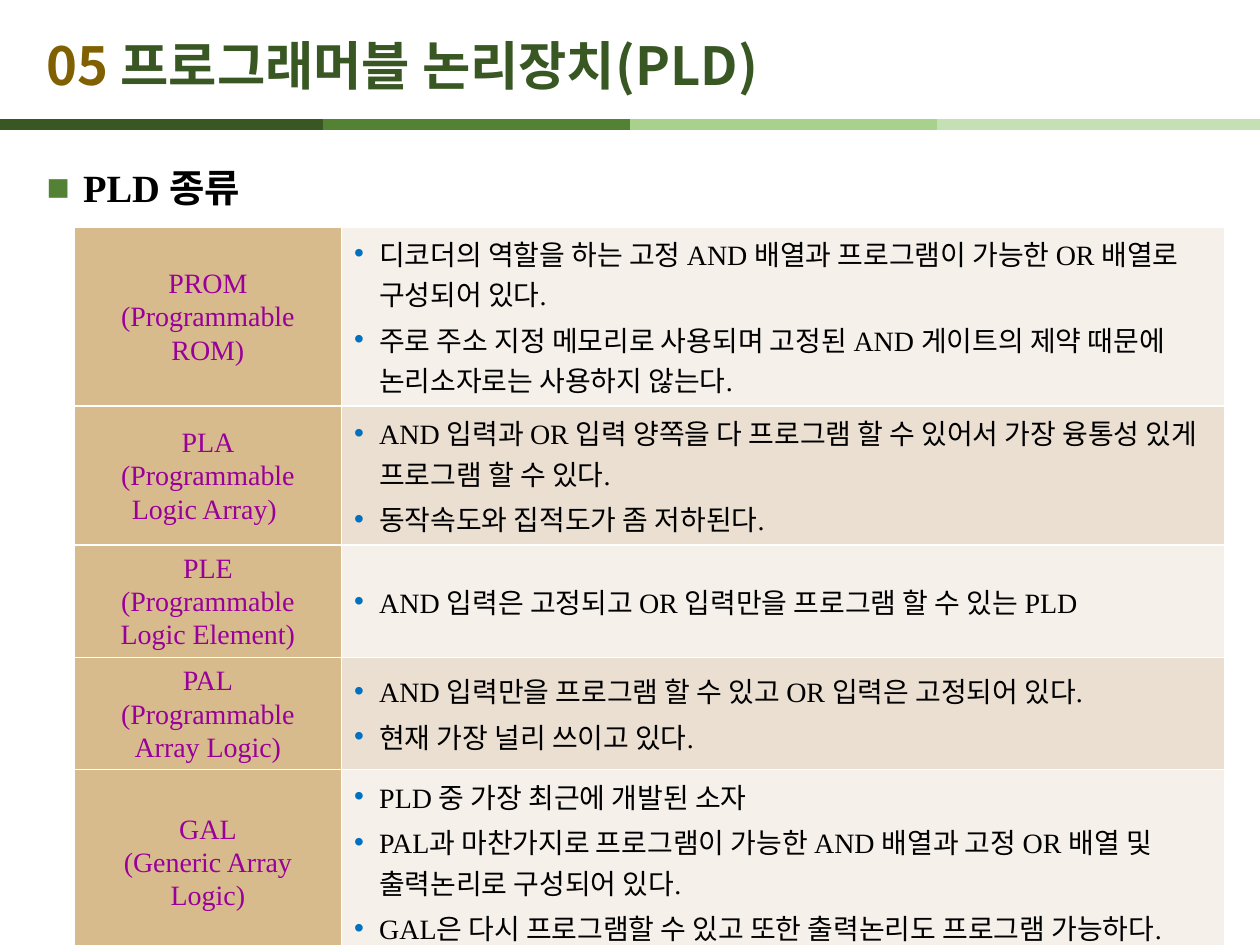
from lxml.etree import SubElement
from pptx import Presentation
from pptx.dml.color import RGBColor
from pptx.enum.shapes import MSO_CONNECTOR
from pptx.enum.text import MSO_ANCHOR, MSO_AUTO_SIZE, PP_ALIGN
from pptx.oxml import parse_xml
from pptx.oxml.ns import nsdecls, qn
from pptx.util import Inches, Pt

KOREAN_FONT = "Noto Sans CJK KR"
LATIN_FONT = "Times New Roman"


def style_runs(paragraph, size, color, latin=LATIN_FONT, bold=False):
    for run in paragraph.runs:
        font = run.font
        font.size, font.bold, font.name = Pt(size), bold, latin
        font.color.rgb = RGBColor.from_string(color)
        SubElement(font._element, qn("a:ea"), typeface=KOREAN_FONT)


def add_bullet(paragraph, character, color, indent):
    properties = paragraph._p.get_or_add_pPr()
    properties.set("marL", str(Inches(indent)))
    properties.set("indent", str(-Inches(indent)))
    bullet_color = SubElement(properties, qn("a:buClr"))
    SubElement(bullet_color, qn("a:srgbClr"), val=color)
    SubElement(properties, qn("a:buFont"), typeface="Arial")
    SubElement(properties, qn("a:buChar"), char=character)


presentation = Presentation()
presentation.slide_width = Inches(10)
presentation.slide_height = Inches(7.5)
slide = presentation.slides.add_slide(presentation.slide_layouts[1])

# Four-colour rule under the title
for left, color in [(0, "385723"), (2.56, "548235"), (5, "A9D18E"), (7.44, "C5E0B4")]:
    rule = slide.shapes.add_connector(
        MSO_CONNECTOR.STRAIGHT, Inches(left), Inches(0.99), Inches(left + 2.56), Inches(0.99))
    rule.line.color.rgb = RGBColor.from_string(color)
    rule.line.width = Pt(6)
    SubElement(rule._element.spPr, qn("a:effectLst"))

# Title and heading
title = slide.shapes.title
title.left, title.top, title.width, title.height = (
    Inches(0.27), Inches(0.21), Inches(8.27), Inches(0.6))
title.text_frame.auto_size = MSO_AUTO_SIZE.NONE
title.text_frame.vertical_anchor = MSO_ANCHOR.MIDDLE
paragraph = title.text_frame.paragraphs[0]
paragraph.alignment = PP_ALIGN.LEFT
paragraph.text = "05 "
paragraph.add_run().text = "프로그래머블 논리장치(PLD)"
style_runs(paragraph, 30, "385723", KOREAN_FONT, bold=True)
paragraph.runs[0].font.color.rgb = RGBColor.from_string("806000")

body = slide.placeholders[1]
body.left, body.top, body.width, body.height = (
    Inches(0.27), Inches(1.07), Inches(9.45), Inches(5.98))
body.text_frame.auto_size = MSO_AUTO_SIZE.NONE
body.text_frame.text = "PLD 종류"
paragraph = body.text_frame.paragraphs[0]
paragraph.line_spacing = 1.5
paragraph.space_before = Pt(0)
add_bullet(paragraph, "■", "548235", 0.29)
style_runs(paragraph, 22, "000000", bold=True)

# Table of PLD types: row height, name, features
pld_types = [
    (1.42, "PROM\n(Programmable ROM)", [
        "디코더의 역할을 하는 고정 AND 배열과 프로그램이 가능한 OR 배열로 구성되어 있다.",
        "주로 주소 지정 메모리로 사용되며 고정된 AND 게이트의 제약 때문에 논리소자로는 사용하지 않는다."]),
    (1.1, "PLA\n(Programmable Logic Array) ", [
        "AND 입력과 OR 입력 양쪽을 다 프로그램 할 수 있어서 가장 융통성 있게 프로그램 할 수 있다.",
        "동작속도와 집적도가 좀 저하된다."]),
    (0.89, "PLE\n(Programmable Logic Element)", [
        "AND 입력은 고정되고 OR 입력만을 프로그램 할 수 있는 PLD"]),
    (0.89, "PAL\n(Programmable Array Logic)", [
        "AND 입력만을 프로그램 할 수 있고 OR 입력은 고정되어 있다.",
        "현재 가장 널리 쓰이고 있다."]),
    (0.88, "GAL\n(Generic Array Logic)", [
        "PLD 중 가장 최근에 개발된 소자",
        "PAL과 마찬가지로 프로그램이 가능한 AND 배열과 고정 OR 배열 및 출력논리로 구성되어 있다.",
        "GAL은 다시 프로그램할 수 있고 또한 출력논리도 프로그램 가능하다."]),
]
table = slide.shapes.add_table(
    len(pld_types), 2, Inches(0.59), Inches(1.8), Inches(9.13), Inches(5.18)).table
table.first_row = table.horz_banding = False
table.columns[0].width = Inches(2.12)
table.columns[1].width = Inches(7.01)

for index, (height, name, features) in enumerate(pld_types):
    table.rows[index].height = Inches(height)
    name_cell, feature_cell = table.cell(index, 0), table.cell(index, 1)

    name_cell.text_frame.text = name
    for paragraph in name_cell.text_frame.paragraphs:
        paragraph.alignment = PP_ALIGN.CENTER
        paragraph.line_spacing = Pt(19)
        style_runs(paragraph, 16, "990099")

    feature_cell.text_frame.text = "\n".join(features)
    for paragraph in feature_cell.text_frame.paragraphs:
        paragraph.space_after = Pt(3)
        add_bullet(paragraph, "•", "0070C0", 0.2)
        style_runs(paragraph, 16, "000000")

    feature_fill = "EBDFD2" if index % 2 else "F5F0EA"
    for cell, color in [(name_cell, "C89F5D"), (feature_cell, feature_fill)]:
        cell.vertical_anchor = MSO_ANCHOR.MIDDLE
        cell.fill.solid()
        cell.fill.fore_color.rgb = RGBColor.from_string(color)
        properties = cell._tc.get_or_add_tcPr()
        for position, side in enumerate(["lnL", "lnR", "lnT", "lnB"]):
            properties.insert(position, parse_xml(
                f'<a:{side} {nsdecls("a")} w="{Pt(1)}"><a:solidFill>'
                f'<a:srgbClr val="FFFFFF"/></a:solidFill></a:{side}>'))
    name_color = name_cell._tc.tcPr.find(qn("a:solidFill")).find(qn("a:srgbClr"))
    SubElement(name_color, qn("a:alpha"), val="70000")

presentation.save("out.pptx")
